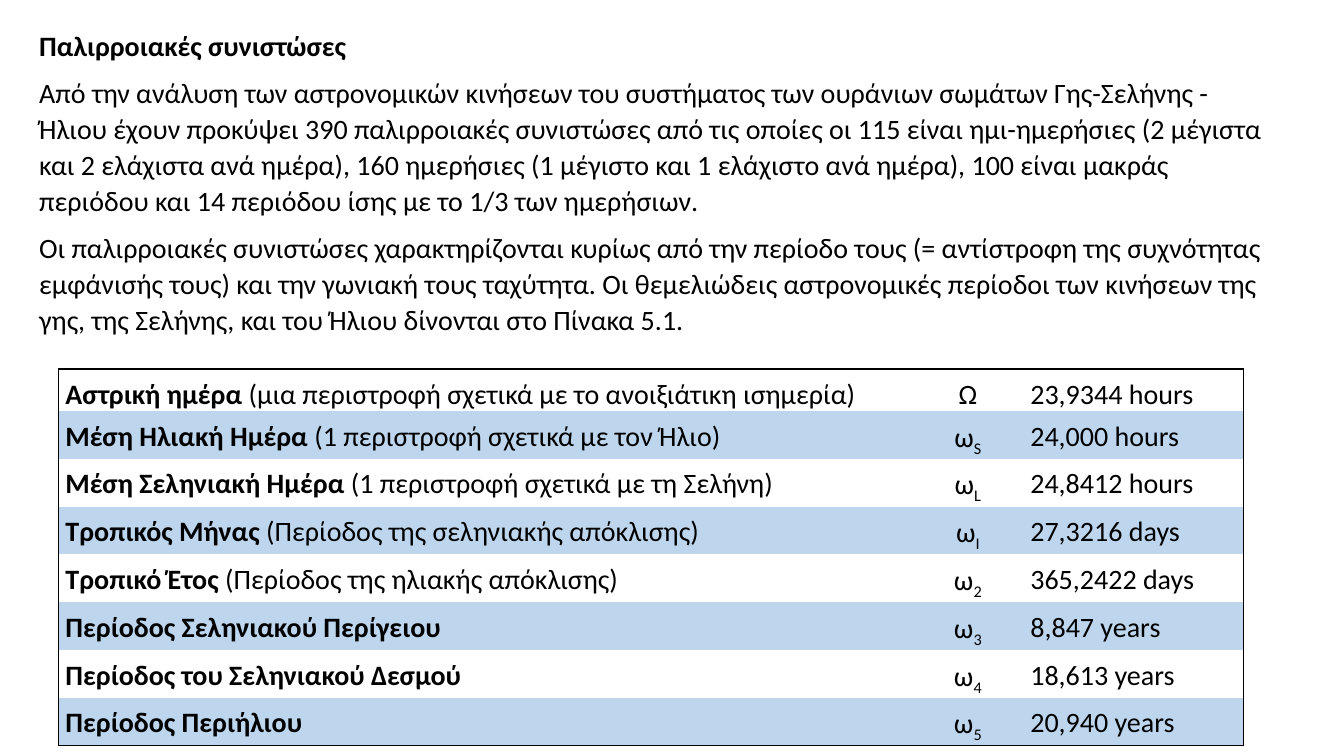
from lxml import etree
from pptx import Presentation, util as u
from pptx.dml.color import RGBColor
from pptx.enum import text
from pptx.oxml.ns import qn

# Content
HEADING = "Παλιρροιακές συνιστώσες"
BODY = [
    "Από την ανάλυση των αστρονομικών κινήσεων του συστήματος των ουράνιων σωμάτων "
    "Γης-Σελήνης - Ήλιου έχουν προκύψει 390 παλιρροιακές συνιστώσες από τις οποίες οι 115 "
    "είναι ημι-ημερήσιες (2 μέγιστα και 2 ελάχιστα ανά ημέρα), 160 ημερήσιες (1 μέγιστο και "
    "1 ελάχιστο ανά ημέρα), 100 είναι μακράς περιόδου και 14 περιόδου ίσης με το 1/3 των "
    "ημερήσιων.",
    "Οι παλιρροιακές συνιστώσες χαρακτηρίζονται κυρίως από την περίοδο τους (= αντίστροφη "
    "της συχνότητας εμφάνισής τους) και την γωνιακή τους ταχύτητα. Οι θεμελιώδεις "
    "αστρονομικές περίοδοι των κινήσεων της γης, της Σελήνης, και του Ήλιου δίνονται στο "
    "Πίνακα 5.1.",
]
# Name, explanation, symbol, subscript, duration
PERIODS = [
    ("Αστρική ημέρα", " (μια περιστροφή σχετικά με το ανοιξιάτικη ισημερία)", "Ω", "", "23,9344 hours"),
    ("Μέση Ηλιακή Ημέρα", " (1 περιστροφή σχετικά με τον Ήλιο)", "ω", "S", "24,000 hours"),
    ("Μέση Σεληνιακή Ημέρα", " (1 περιστροφή σχετικά με τη Σελήνη)", "ω", "L", "24,8412 hours"),
    ("Τροπικός Mήνας", " (Περίοδος της σεληνιακής απόκλισης)", "ω", "I", "27,3216 days"),
    ("Τροπικό Έτος", " (Περίοδος της ηλιακής απόκλισης)", "ω", "2", "365,2422 days"),
    ("Περίοδος Σεληνιακού Περίγειου", "", "ω", "3", "8,847 years"),
    ("Περίοδος του Σεληνιακού Δεσμού", "", "ω", "4", "18,613 years"),
    ("Περίοδος Περιήλιου", "", "ω", "5", "20,940 years"),
]
BANDS = ("FFFFFF", "BDD6EE")
INK = "000000"
COLUMNS = (8.47, 1.1, 2.18)
ROW = 0.3


def color(value):
    return RGBColor.from_string(value)


def add_run(paragraph, words, bold=False, subscript=False):
    if not words:
        return
    run = paragraph.add_run()
    run.text = words
    run.font.name, run.font.size, run.font.bold = "Calibri", u.Pt(20), bold
    run.font.color.rgb = color(INK)
    if subscript:
        run.font._element.set("baseline", "-25000")


def set_edges(cell, drawn):
    """Draw the named edges of a cell and clear the others."""
    props = cell._tc.get_or_add_tcPr()
    for side in "LRTB":
        line = etree.SubElement(props, qn(f"a:ln{side}"), w=str(u.Pt(1)))
        if side in drawn:
            fill = etree.SubElement(line, qn("a:solidFill"))
            etree.SubElement(fill, qn("a:srgbClr"), val=INK)
        else:
            etree.SubElement(line, qn("a:noFill"))


deck = Presentation()
deck.slide_width, deck.slide_height = u.Inches(13.33), u.Inches(7.5)
slide = deck.slides.add_slide(deck.slide_layouts[6])
slide.background.fill.solid()
slide.background.fill.fore_color.rgb = color("FFFFFF")

# Heading and explanation
intro = slide.shapes.add_textbox(*map(u.Inches, (0.29, 0.21, 12.49, 3.19))).text_frame
intro.word_wrap = True
for i, words in enumerate([HEADING, *BODY]):
    paragraph = intro.add_paragraph() if i else intro.paragraphs[0]
    paragraph.line_spacing, paragraph.space_after = 1.07, u.Pt(8)
    add_run(paragraph, words, bold=i == 0)

# Table of astronomical periods
last_row, last_column = len(PERIODS) - 1, len(COLUMNS) - 1
periods = slide.shapes.add_table(
    len(PERIODS), len(COLUMNS), u.Inches(0.58), u.Inches(3.66),
    u.Inches(sum(COLUMNS)), u.Inches(ROW * len(PERIODS))).table
periods.first_row = periods.horz_banding = False
for column, width in zip(periods.columns, COLUMNS):
    column.width = u.Inches(width)

for r, (name, note, symbol, index, duration) in enumerate(PERIODS):
    row_runs = (
        [(name, True), (note,)],
        [(symbol,), (index, False, True)],
        [(duration,)],
    )
    for c, runs in enumerate(row_runs):
        cell = periods.cell(r, c)
        cell.margin_left = cell.margin_right = u.Inches(0.07)
        cell.margin_top = cell.margin_bottom = 0
        outer = {"L": c == 0, "R": c == last_column, "T": r == 0, "B": r == last_row}
        set_edges(cell, [side for side, on in outer.items() if on])
        cell.fill.solid()
        cell.fill.fore_color.rgb = color(BANDS[r % 2])
        paragraph = cell.text_frame.paragraphs[0]
        paragraph.line_spacing, paragraph.space_after = 1.25, u.Pt(12)
        paragraph.alignment = text.PP_ALIGN.CENTER if c == 1 else text.PP_ALIGN.LEFT
        for run in runs:
            add_run(paragraph, *run)

deck.save("out.pptx")
